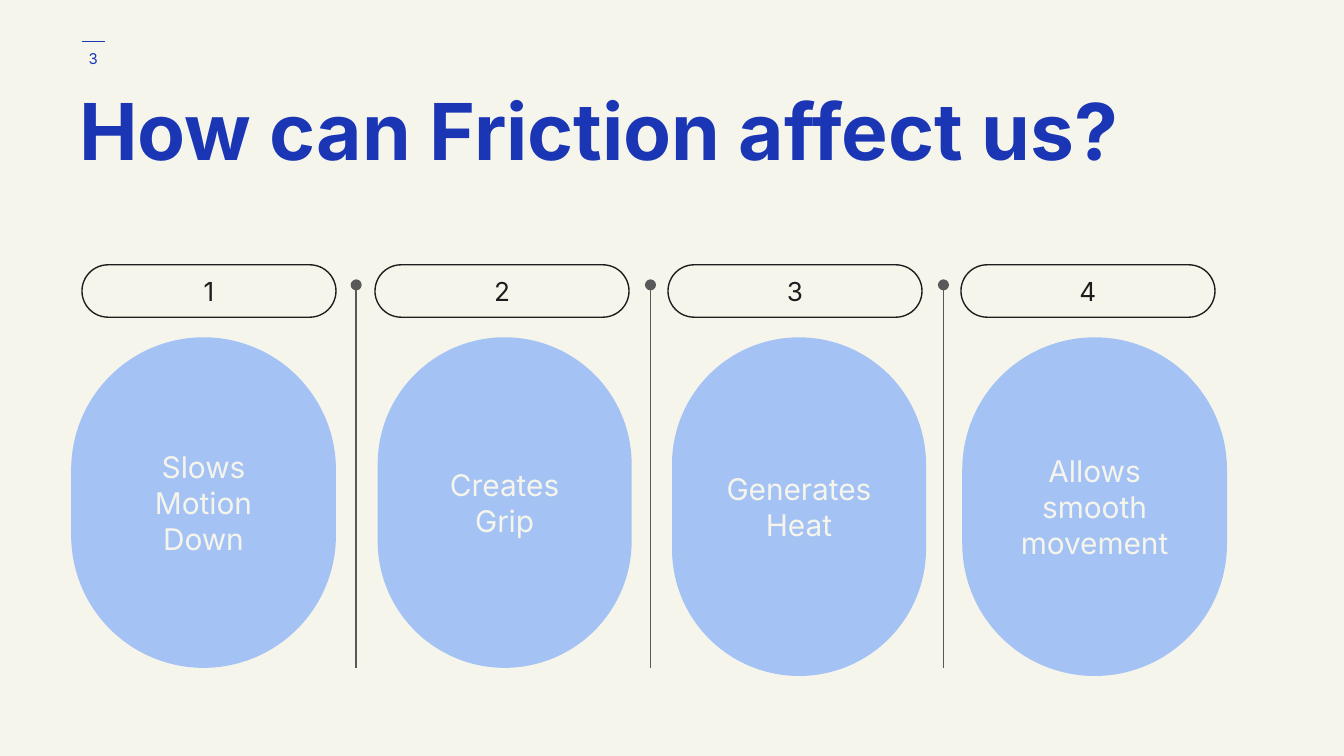
from pptx import Presentation
from pptx.dml.color import RGBColor
from pptx.enum.shapes import MSO_CONNECTOR as CONNECTOR, MSO_SHAPE as SHAPE
from pptx.enum.text import MSO_ANCHOR as ANCHOR, PP_ALIGN as ALIGN
from pptx.oxml.ns import qn
from pptx.util import Inches, Pt
from lxml import etree

CREAM, BLUE, SKY, INK, GRAY = "F6F5EC", "1A36B4", "A4C2F4", "1D1D1D", "595959"


def write(shape, text, size, color, align=ALIGN.CENTER, anchor=ANCHOR.MIDDLE):
    frame = shape.text_frame
    frame.word_wrap = True
    frame.vertical_anchor = anchor
    frame.margin_left = frame.margin_right = Inches(0.1)
    frame.margin_top = frame.margin_bottom = Inches(0.1)
    frame.text = text
    para = frame.paragraphs[0]
    para.alignment = align
    font = para.runs[0].font
    font.name, font.size = "Inter", Pt(size)
    font.color.rgb = RGBColor.from_string(color)
    return para


def add_line(x1, y1, x2, y2, color):
    line = page.shapes.add_connector(
        CONNECTOR.STRAIGHT, Inches(x1), Inches(y1), Inches(x2), Inches(y2))
    line.line.color.rgb = RGBColor.from_string(color)
    line.line.width = Pt(0.75)
    etree.SubElement(line._element.spPr, qn("a:effectLst"))
    return line


deck = Presentation()
deck.slide_width = Inches(10)
deck.slide_height = Inches(10) * 9 // 16
page = deck.slides.add_slide(deck.slide_layouts[6])
page.background.fill.solid()
page.background.fill.fore_color.rgb = RGBColor.from_string(CREAM)

# Heading and page number
add_line(0.78, 0.31, 0.61, 0.31, BLUE)
title = page.shapes.add_textbox(Inches(0.49), Inches(0.65), Inches(8.55), Inches(1.14))
para = write(title, "How can Friction affect us?", 42, BLUE, ALIGN.LEFT, ANCHOR.TOP)
para.line_spacing = 0.8
para.runs[0].font.bold = True
number = page.shapes.add_textbox(Inches(0.46), Inches(0.22), Inches(0.47), Inches(0.43))
write(number, "3", 8, BLUE)

# Numbered columns: effect, then left, width and height of its card
effects = [
    ("Slows Motion Down", 0.53, 1.97, 2.46),
    ("Creates Grip", 2.81, 1.89, 2.46),
    ("Generates Heat", 5.0, 1.89, 2.52),
    ("Allows smooth movement", 7.16, 1.97, 2.52),
]
COLUMN_STEP = 2.18
for index, (effect, left, width, height) in enumerate(effects):
    label = page.shapes.add_shape(
        SHAPE.ROUNDED_RECTANGLE, Inches(0.61 + index * COLUMN_STEP), Inches(1.97),
        Inches(1.89), Inches(0.39))
    label.fill.background()
    label.line.color.rgb = RGBColor.from_string(INK)
    label.line.width = Pt(0.75)
    write(label, str(index + 1), 14, INK)

    card = page.shapes.add_shape(
        SHAPE.ROUNDED_RECTANGLE, Inches(left), Inches(2.51), Inches(width), Inches(height))
    card.fill.solid()
    card.fill.fore_color.rgb = RGBColor.from_string(SKY)
    card.line.fill.background()
    write(card, effect, 16, CREAM)

    for shape in (label, card):
        shape.adjustments[0] = 0.5
        shape.shadow.inherit = False

# Dividers with a dot at the top
for x in (2.65, 4.84, 7.02):
    divider = add_line(x, 2.12, x, 4.97, GRAY)
    outline = divider.line._get_or_add_ln()
    etree.SubElement(outline, qn("a:headEnd"), type="oval", w="med", len="med")

deck.save("out.pptx")
